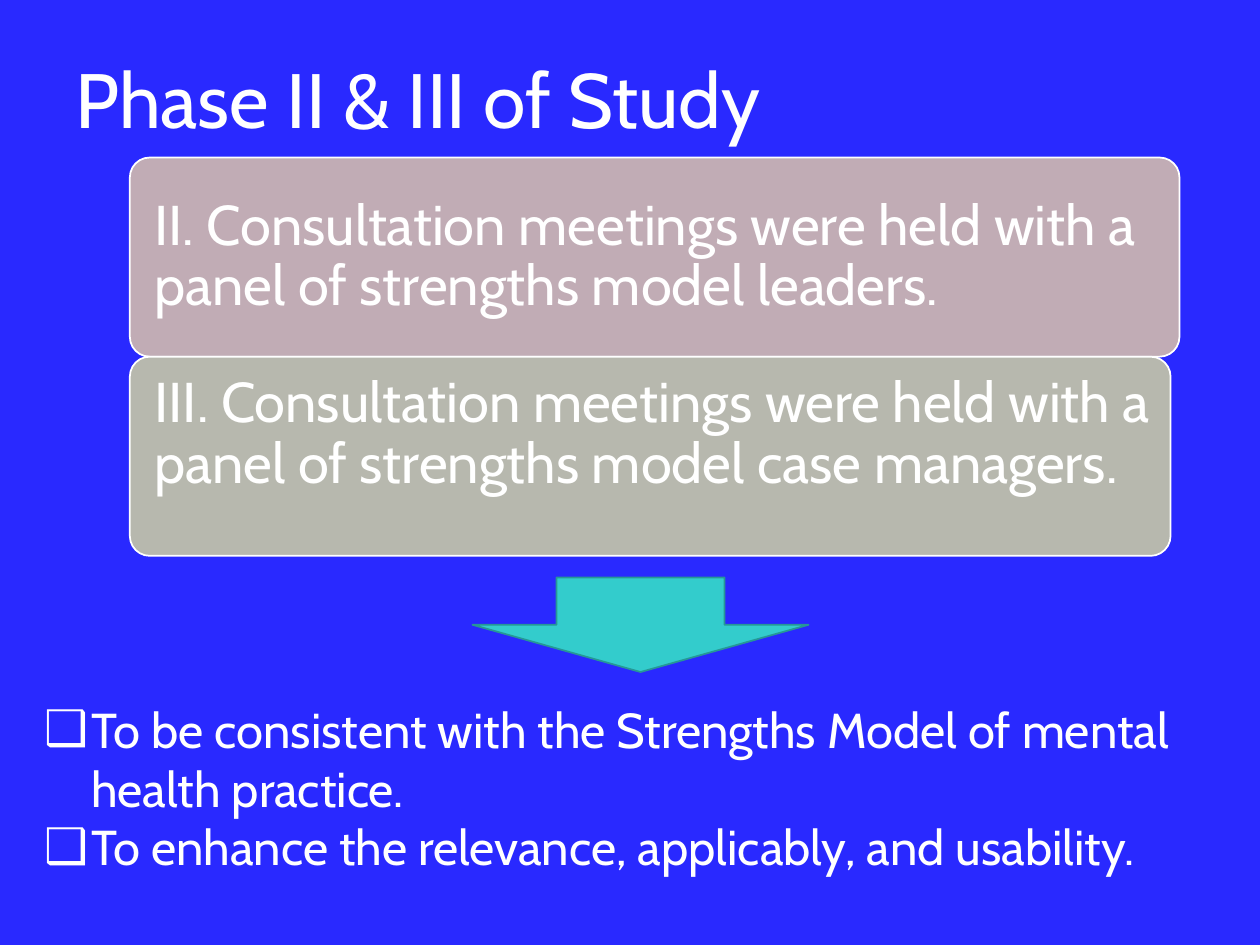
import pptx
import pptx.util
import pptx.dml.color
import pptx.enum.shapes
import pptx.enum.text
import pptx.oxml.ns
import lxml.etree

Pt = pptx.util.Pt
Shape = pptx.enum.shapes.MSO_SHAPE
Align = pptx.enum.text.PP_ALIGN
Anchor = pptx.enum.text.MSO_ANCHOR
Fit = pptx.enum.text.MSO_AUTO_SIZE

theme = {
    "back": "2929FF", "ink": "FFFFFF", "rose": "C1ACB5", "stone": "B7B8AE",
    "teal": "33CCCC", "edge": "269797",
    "font": "Cabin", "title": 44, "panel": 32, "list": 28,
}


def tint(name):
    return pptx.dml.color.RGBColor.from_string(theme[name])


def write(shape, lines, size, form, gap=1.0):
    """Fill a text frame, one paragraph a line, with the frame format given."""
    frame = shape.text_frame
    frame.text = "\n".join(lines)
    for key, value in form.items():
        setattr(frame, key, value)
    for par in frame.paragraphs:
        look = {"alignment": Align.LEFT, "line_spacing": gap,
                "space_before": Pt(0), "space_after": Pt(0)}
        for key, value in look.items():
            setattr(par, key, value)
        for run in par.runs:
            run.font.name = theme["font"]
            run.font.size = Pt(theme[size])
            run.font.color.rgb = tint("ink")


deck = pptx.Presentation()
deck.slide_width, deck.slide_height = Pt(720), Pt(540)
slide = deck.slides.add_slide(deck.slide_layouts[1])
slide.background.fill.solid()
slide.background.fill.fore_color.rgb = tint("back")

# Title and list
title, body = slide.placeholders
spots = [(title, (36, 21.6, 648, 68.4)), (body, (18, 396, 690, 108.7))]
for holder, spot in spots:
    holder.left, holder.top, holder.width, holder.height = map(Pt, spot)

write(title, ["Phase II & III of Study"], "title",
      {"word_wrap": True, "auto_size": Fit.NONE, "vertical_anchor": Anchor.MIDDLE})
goals = [
    "To be consistent with the Strengths Model of mental health practice.",
    "To enhance the relevance, applicably, and usability.",
]
write(body, goals, "list",
      {"word_wrap": True, "auto_size": Fit.NONE, "vertical_anchor": Anchor.TOP})
for par in body.text_frame.paragraphs:
    props = par._p.get_or_add_pPr()
    props.set("marL", str(Pt(27)))
    props.set("indent", str(-Pt(27)))
    mark = lxml.etree.SubElement(props, pptx.oxml.ns.qn("a:buChar"))
    mark.set("char", "❑")

# Panels: fill, width, text width, text height, words
high = 113.8
panels = [
    ("rose", 599.8, 590.4, 107.3,
     "II. Consultation meetings were held with a panel of strengths model leaders."),
    ("stone", 594.7, 589.7, 82.8,
     "III. Consultation meetings were held with a panel of strengths model case managers."),
]
inset = {"margin_" + side: Pt(9.6) for side in ("left", "top", "right", "bottom")}
for row, (fill, wide, span, tall, words) in enumerate(panels):
    top = 90 + row * high
    group = slide.shapes.add_group_shape()
    card = group.shapes.add_shape(Shape.ROUNDED_RECTANGLE,
                                  Pt(74.2), Pt(top), Pt(wide), Pt(high))
    card.adjustments[0] = 0.1
    card.shadow.inherit = False
    card.fill.solid()
    card.fill.fore_color.rgb = tint(fill)
    card.line.color.rgb = tint("ink")
    card.line.width = Pt(1)
    label = group.shapes.add_textbox(Pt(78.5), Pt(top + 3.3), Pt(span), Pt(tall))
    write(label, [words], "panel",
          {"word_wrap": True, "vertical_anchor": Anchor.MIDDLE, **inset}, 0.9)

# Arrow from the panels to the list
arrow = slide.shapes.add_shape(Shape.UP_ARROW, Pt(270), Pt(330), Pt(192), Pt(54))
arrow.rotation = 180
arrow.shadow.inherit = False
arrow.fill.solid()
arrow.fill.fore_color.rgb = tint("teal")
arrow.line.color.rgb = tint("edge")
arrow.line.width = Pt(1)

deck.save("out.pptx")
